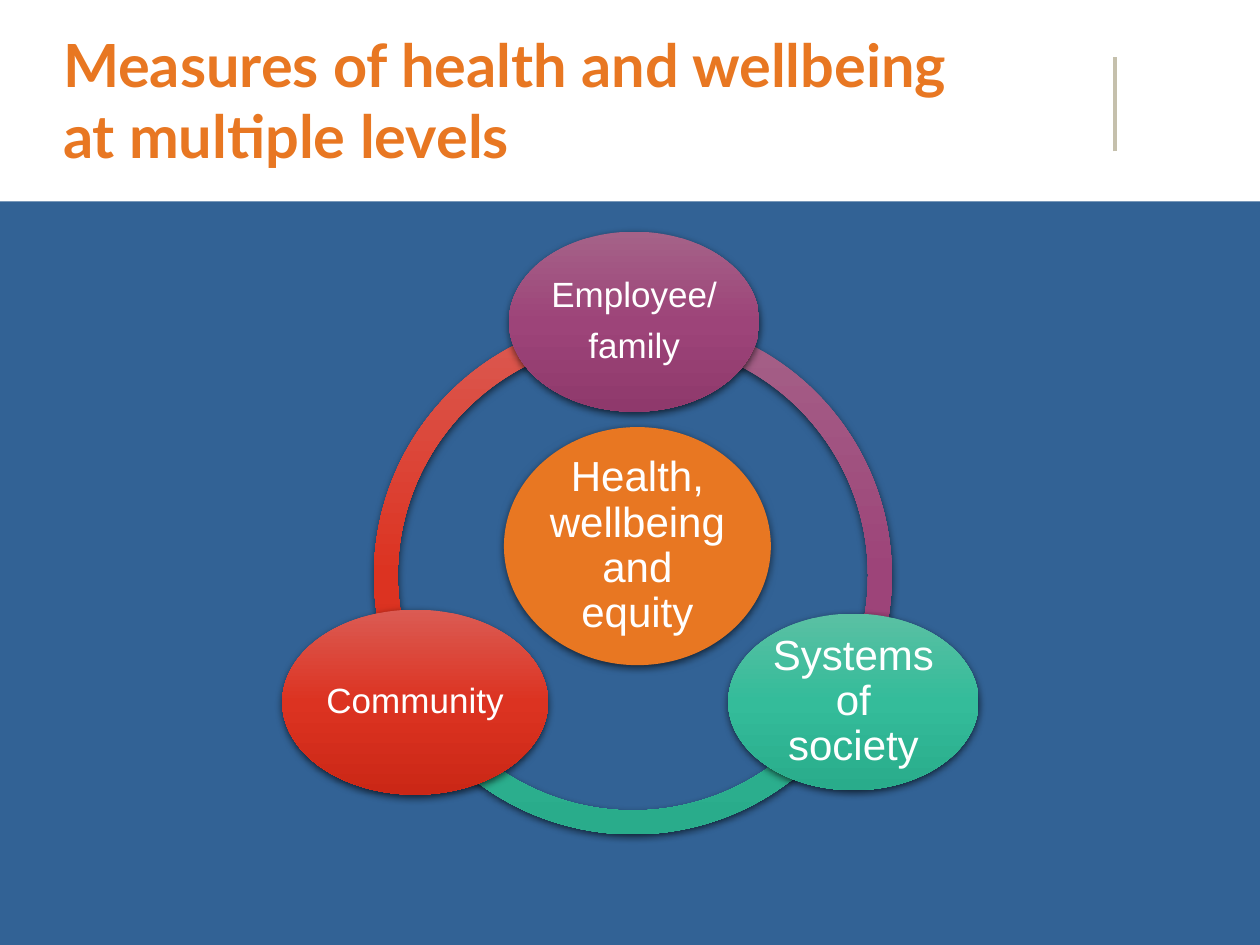
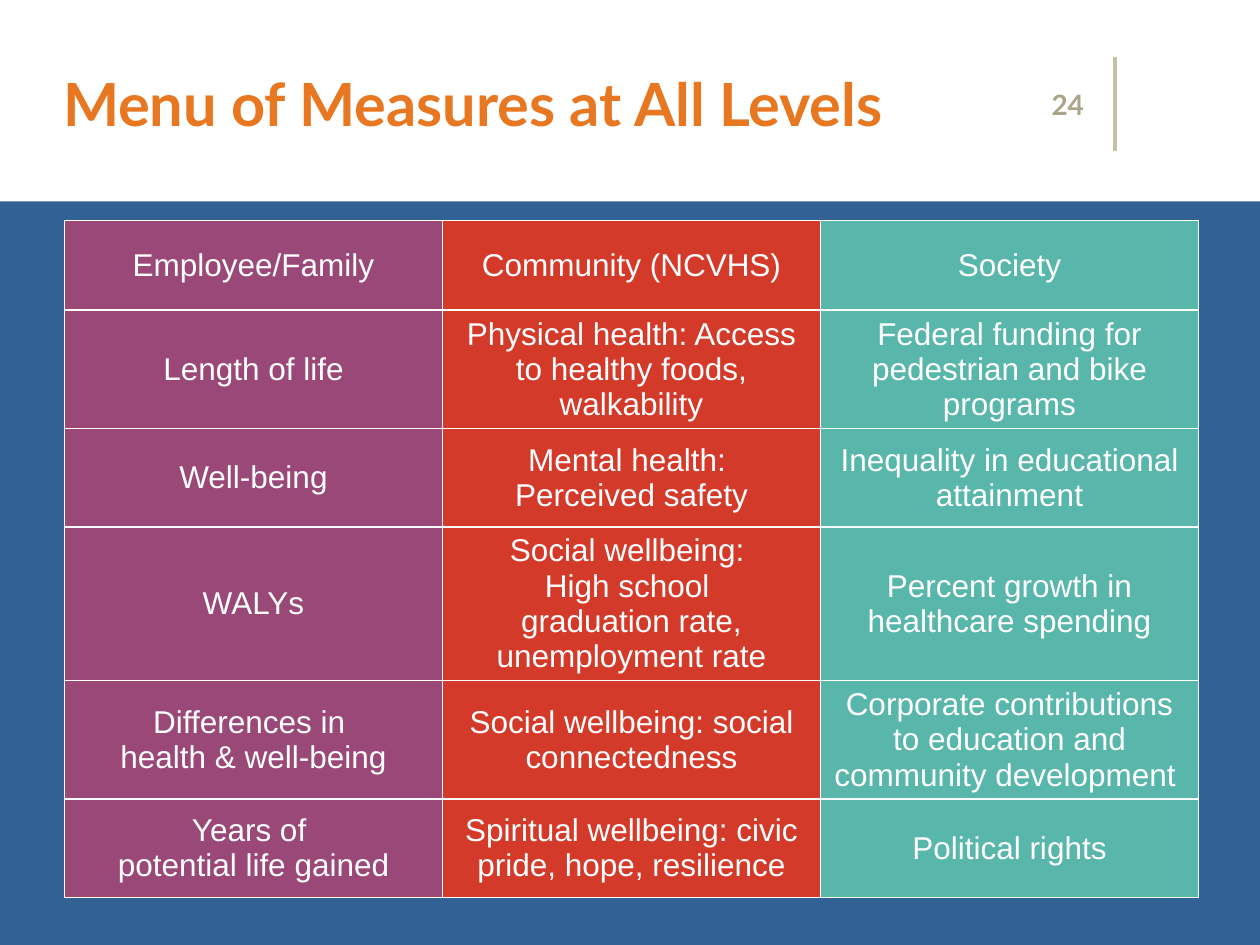
from lxml.etree import SubElement
from pptx import Presentation
from pptx.dml.color import RGBColor
from pptx.enum.shapes import MSO_CONNECTOR, MSO_SHAPE
from pptx.enum.text import MSO_ANCHOR, MSO_AUTO_SIZE, PP_ALIGN
from pptx.oxml import parse_xml
from pptx.oxml.ns import nsdecls, qn
from pptx.util import Cm, Pt

COLORS = {
    "white": "FFFFFF", "band": "326295", "orange": "E87722",
    "rule": "C5C0AC", "number": "ACA488", "shadow": "000000",
    "family": "994878", "community": "D43A2A", "society": "58B6AA",
}
GRADIENTS = {
    "family": ("A56288", "9D4479", "8F396C"),
    "community": ("DB5B53", "DC3321", "CB2716"),
    "society": ("5AC0A3", "34BC9A", "29AC8B"),
}
TITLE_FONT, TEXT_FONT = "Lato", "Arial"

# Ring segments: gradient, start and end adjustment of the block arc
RING_ARCS = [("community", 90, 162), ("society", 18, 90), ("family", 162, 18)]
RING_BOX = (1.85, 1.71, 10.44, 10.44)
RING_THICKNESS = 0.046

# Ellipses: text, size, fill, box in cm within the diagram
LEVELS = [
    ("Health, wellbeing and equity", 24, "orange", (4.47, 3.94, 5.38, 4.8)),
    ("Employee/\nfamily", 20, "family", (4.57, 0, 5.05, 3.63)),
    ("Systems of society", 24, "society", (8.99, 7.7, 5.05, 3.56)),
    ("Community", 20, "community", (0, 7.62, 5.36, 3.73)),
]

MEASURE_COLUMNS = ["family", "community", "society"]
MEASURES = [
    ("Employee/Family", "Community (NCVHS)", "Society"),
    ("Length of life",
     "Physical health: Access to healthy foods, walkability",
     "Federal funding for pedestrian and bike programs"),
    ("Well-being", "Mental health: \nPerceived safety",
     "Inequality in educational attainment"),
    ("WALYs",
     "Social wellbeing: \nHigh school \ngraduation rate, unemployment rate",
     "Percent growth in healthcare spending"),
    ("Differences in \nhealth & well-being",
     "Social wellbeing: social connectedness",
     "Corporate contributions to education and community development "),
    ("Years of \npotential life gained",
     "Spiritual wellbeing: civic pride, hope, resilience",
     "Political rights"),
]
ROW_HEIGHTS = [1.8, 2.39, 1.98, 3.1, 2.39, 1.98]


def rgb(name):
    return RGBColor.from_string(COLORS[name])


def cm_box(box, left=0, top=0):
    """Convert a box in cm, offset by its region's corner, to lengths."""
    x, y, width, height = box
    return Cm(left + x), Cm(top + y), Cm(width), Cm(height)


def write_text(frame, text, size=18, font=TEXT_FONT, color="white", bold=False,
               align=PP_ALIGN.CENTER, line_spacing=None, space_after=None):
    """Fill a text frame, one paragraph for each line of text."""
    frame.word_wrap = True
    frame.vertical_anchor = MSO_ANCHOR.MIDDLE
    for index, line in enumerate(text.split("\n")):
        paragraph = frame.add_paragraph() if index else frame.paragraphs[0]
        paragraph.alignment = align
        if line_spacing:
            paragraph.line_spacing = line_spacing
        if space_after:
            paragraph.space_after = Pt(space_after)
        run = paragraph.add_run()
        run.text = line
        run.font.size, run.font.name, run.font.bold = Pt(size), font, bold
        run.font.color.rgb = rgb(color)


def fill_gradient(shape, stops):
    """Give a shape an evenly spaced gradient from top to bottom."""
    shape.fill.background()
    step = 100000 // (len(stops) - 1)
    stop_xml = "".join(
        f'<a:gs pos="{index * step}"><a:srgbClr val="{color}"/></a:gs>'
        for index, color in enumerate(stops))
    properties = shape.element.spPr
    properties.replace(properties.find(qn("a:noFill")), parse_xml(
        f'<a:gradFill {nsdecls("a")} rotWithShape="1"><a:gsLst>{stop_xml}</a:gsLst>'
        '<a:lin ang="5400000" scaled="0"/></a:gradFill>'))


def add_shadow(shape):
    shape.shadow.inherit = False
    effects = shape.element.spPr.find(qn("a:effectLst"))
    shadow = SubElement(effects, qn("a:outerShdw"), blurRad=str(Pt(4.5)),
                        dist=str(Pt(1.5)), dir="5400000", rotWithShape="0")
    color = SubElement(shadow, qn("a:srgbClr"), val=COLORS["shadow"])
    SubElement(color, qn("a:alpha"), val="63000")


def add_diagram_shape(slide, kind, fill, box):
    shape = slide.shapes.add_shape(kind, *box)
    if fill in GRADIENTS:
        fill_gradient(shape, GRADIENTS[fill])
    else:
        shape.fill.solid()
        shape.fill.fore_color.rgb = rgb(fill)
    shape.line.fill.background()
    add_shadow(shape)
    return shape


def add_framed_slide(presentation, title, title_top):
    """Add a slide with the blue band, header rule and title."""
    slide = presentation.slides.add_slide(presentation.slide_layouts[5])

    band = slide.shapes.add_shape(MSO_SHAPE.RECTANGLE, *cm_box((0, 4.06, 25.4, 14.99)))
    band.fill.solid()
    band.fill.fore_color.rgb = rgb("band")
    band.line.fill.background()
    band.shadow.inherit = False

    rule = slide.shapes.add_connector(
        MSO_CONNECTOR.STRAIGHT, Cm(22.48), Cm(3.05), Cm(22.48), Cm(1.14))
    rule.line.color.rgb = rgb("rule")
    rule.line.width = Pt(2)
    SubElement(rule.element.spPr, qn("a:effectLst"))

    heading = slide.shapes.title
    heading.left, heading.top, heading.width, heading.height = cm_box(
        (1.27, title_top, 18.42, 2.87))
    frame = heading.text_frame
    frame.auto_size = MSO_AUTO_SIZE.NONE
    frame.margin_left = 0
    write_text(frame, title, size=34, font=TITLE_FONT, color="orange",
               bold=True, align=PP_ALIGN.LEFT)
    return slide


def add_levels_diagram(slide, left, top):
    # Ring
    for fill, start, end in RING_ARCS:
        arc = add_diagram_shape(slide, MSO_SHAPE.BLOCK_ARC, fill,
                                cm_box(RING_BOX, left, top))
        for index, value in enumerate((start, end, RING_THICKNESS)):
            arc.adjustments[index] = value
    # Hub and levels
    for text, size, fill, box in LEVELS:
        ellipse = add_diagram_shape(slide, MSO_SHAPE.OVAL, fill,
                                    cm_box(box, left, top))
        frame = ellipse.text_frame
        frame.margin_left = frame.margin_right = Cm(0.08)
        frame.margin_top = frame.margin_bottom = Cm(0.08)
        write_text(frame, text, size=size, line_spacing=0.9, space_after=8)


def add_cell_borders(cell):
    properties = cell._tc.get_or_add_tcPr()
    for side in ("lnL", "lnR", "lnT", "lnB"):
        line = SubElement(properties, qn(f"a:{side}"), w=str(Pt(1)))
        fill = SubElement(line, qn("a:solidFill"))
        SubElement(fill, qn("a:srgbClr"), val=COLORS["white"])


def add_measures_table(slide, left, top, width):
    table = slide.shapes.add_table(
        len(MEASURES), len(MEASURE_COLUMNS),
        *cm_box((left, top, width, sum(ROW_HEIGHTS)))).table
    table.first_row = table.horz_banding = False
    for column in table.columns:
        column.width = Cm(width / len(MEASURE_COLUMNS))
    for row, height, texts in zip(table.rows, ROW_HEIGHTS, MEASURES):
        row.height = Cm(height)
        for cell, text, fill in zip(row.cells, texts, MEASURE_COLUMNS):
            add_cell_borders(cell)
            cell.fill.solid()
            cell.fill.fore_color.rgb = rgb(fill)
            write_text(cell.text_frame, text)
            cell.vertical_anchor = MSO_ANCHOR.MIDDLE


def add_page_number(slide, number):
    box = slide.shapes.add_textbox(*cm_box((20.19, 1.14, 1.91, 1.91)))
    write_text(box.text_frame, number, size=16, font=TITLE_FONT, color="number",
               bold=True, align=PP_ALIGN.RIGHT)


def main():
    presentation = Presentation()
    presentation.slide_width, presentation.slide_height = Cm(25.4), Cm(19.05)

    levels = add_framed_slide(
        presentation, "Measures of health and wellbeing at multiple levels", 0.56)
    add_levels_diagram(levels, left=5.69, top=4.67)

    menu = add_framed_slide(presentation, "Menu of Measures at All Levels", 0.64)
    add_measures_table(menu, left=1.3, top=4.45, width=22.86)
    add_page_number(menu, "24")

    presentation.save("out.pptx")


if __name__ == "__main__":
    main()
